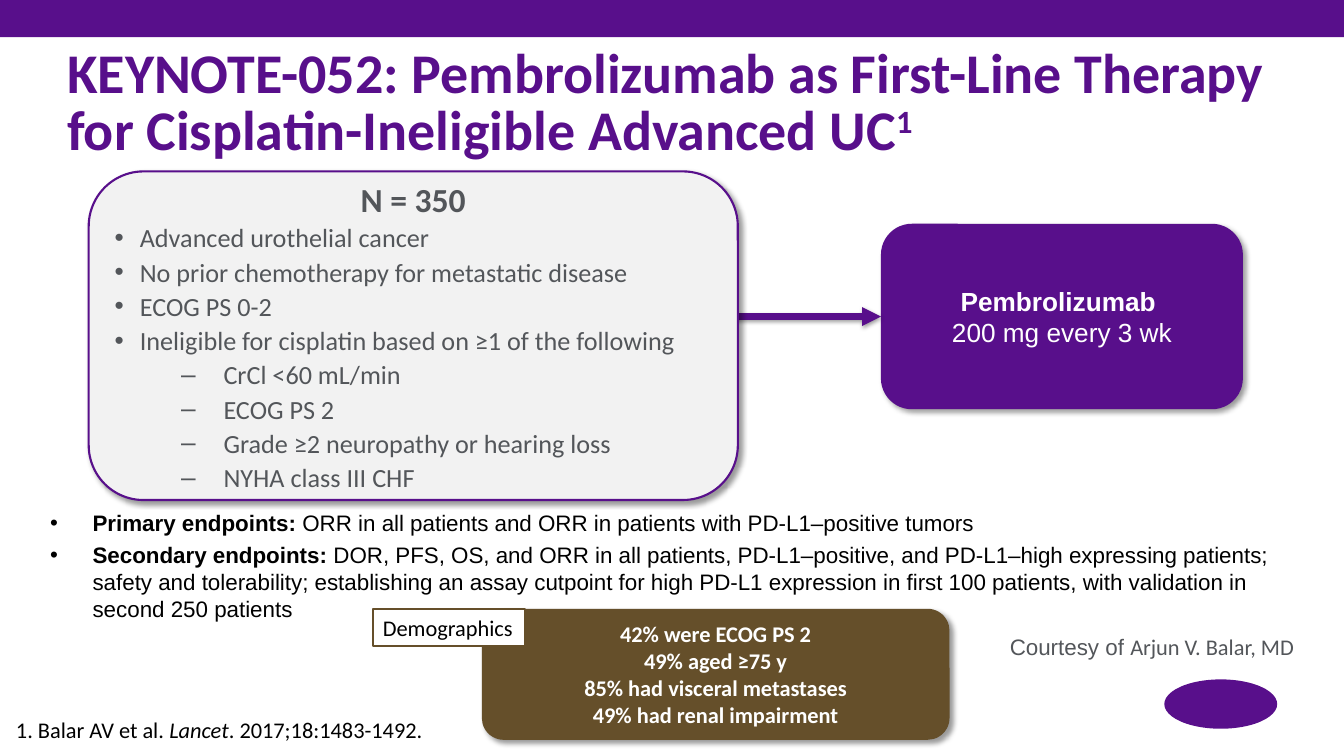
import lxml.etree
import pptx
import pptx.dml.color
import pptx.enum.shapes
import pptx.enum.text
import pptx.oxml.ns
import pptx.util

SHAPE = pptx.enum.shapes.MSO_SHAPE
ALIGN = pptx.enum.text.PP_ALIGN
ANCHOR = pptx.enum.text.MSO_ANCHOR
PURPLE, BROWN, PALE = "580F8B", "654F2A", "F2F2F2"
GREY, BLACK, WHITE = "53565A", "000000", "FFFFFF"


def color(hex_code):
    return pptx.dml.color.RGBColor.from_string(hex_code)


def child(parent, tag, **attributes):
    """Append a DrawingML element and return it."""
    element = lxml.etree.SubElement(parent, pptx.oxml.ns.qn(f"a:{tag}"))
    for key, value in attributes.items():
        element.set(key, str(value))
    return element


def cast_shadow(effects, opacity=40, blur=4, distance=3, angle=45):
    shadow = child(effects, "outerShdw", blurRad=pptx.util.Pt(blur),
                   dist=pptx.util.Pt(distance), dir=angle * 60000,
                   algn="ctr", rotWithShape=0)
    child(child(shadow, "srgbClr", val=BLACK), "alpha", val=opacity * 1000)


class TrialSlide:
    """One slide; positions and sizes are percentages of its width and height."""

    def __init__(self):
        self.deck = pptx.Presentation()
        self.deck.slide_width = pptx.util.Inches(13.333)
        self.deck.slide_height = pptx.util.Inches(7.5)
        self.slide = self.deck.slides.add_slide(self.deck.slide_layouts[6])

    def place(self, *shares):
        """Turn x, y (and width, height) percentages into slide lengths."""
        sides = (self.deck.slide_width, self.deck.slide_height) * 2
        return [int(side * share / 100) for side, share in zip(sides, shares)]

    def panel(self, kind, area, fill, outline=None, shadow=False):
        panel = self.slide.shapes.add_shape(kind, *self.place(*area))
        panel.fill.solid()
        panel.fill.fore_color.rgb = color(fill)
        if outline:
            panel.line.color.rgb = color(outline)
            panel.line.width = pptx.util.Pt(1.5)
        else:
            panel.line.fill.background()
        panel.shadow.inherit = False
        if shadow:
            cast_shadow(panel._element.spPr.find(pptx.oxml.ns.qn("a:effectLst")))
        return panel.text_frame

    def text_area(self, area):
        return self.slide.shapes.add_textbox(*self.place(*area)).text_frame

    def arrow(self, start, end, ink, width):
        arrow = self.slide.shapes.add_connector(
            pptx.enum.shapes.MSO_CONNECTOR.STRAIGHT,
            *self.place(*start), *self.place(*end))
        arrow.line.color.rgb = color(ink)
        arrow.line.width = pptx.util.Pt(width)
        child(arrow.line._get_or_add_ln(), "tailEnd", type="triangle")
        cast_shadow(child(arrow._element.spPr, "effectLst"), 38, 3.1, 1.6, 90)

    def frame(self, frame, anchor=ANCHOR.TOP, wrap=True, grow=False):
        frame.vertical_anchor = anchor
        frame.word_wrap = wrap
        if grow:
            frame.auto_size = pptx.enum.text.MSO_AUTO_SIZE.SHAPE_TO_FIT_TEXT
        return frame

    def paragraph(self, frame, runs, size, ink, face="Calibri", bold=None,
                  align=ALIGN.LEFT, after=0, bullet=None, indent=0, hang=0, level=0):
        """Write runs given as (text, font overrides) pairs into the next paragraph."""
        first = frame.paragraphs[0]
        paragraph = frame.add_paragraph() if first.runs else first
        paragraph.alignment = align
        paragraph.level = level
        paragraph.space_after = pptx.util.Pt(after)
        if bullet:
            properties = paragraph._p.get_or_add_pPr()
            properties.set("marL", str(pptx.util.Inches(indent)))
            properties.set("indent", str(-pptx.util.Inches(hang)))
            child(properties, "buFont", typeface="Arial")
            child(properties, "buChar", char=bullet)
        font = paragraph.font
        font.size, font.name, font.bold = pptx.util.Pt(size), face, bold
        font.color.rgb = color(ink)
        for words, overrides in runs:
            run = paragraph.add_run()
            run.text = words
            for key, value in overrides.items():
                setattr(run.font, key, value)
        return paragraph


def add_heading(page):
    page.panel(SHAPE.RECTANGLE, (0, 0, 100, 4.93), PURPLE)
    title = page.frame(page.text_area((5, 15.33, 90, 6.13)), ANCHOR.BOTTOM)
    title.margin_left = title.margin_right = title.margin_top = title.margin_bottom = 0
    heading = page.paragraph(
        title, [("KEYNOTE-052: Pembrolizumab as First-Line Therapy ", {})],
        40, PURPLE, bold=True)
    heading.line_spacing = 0.85
    heading.add_line_break()
    heading.add_run().text = "for Cisplatin-Ineligible Advanced UC"
    citation_mark = heading.add_run()
    citation_mark.text = "1"
    citation_mark._r.get_or_add_rPr().set("baseline", "30000")


def add_trial_design(page):
    treatment = page.frame(page.panel(
        SHAPE.ROUNDED_RECTANGLE, (65.55, 29.6, 26.93, 24.53), PURPLE, shadow=True),
        ANCHOR.MIDDLE)
    for words, bold in (("Pembrolizumab ", True), ("200 mg every 3 wk", False)):
        page.paragraph(treatment, [(words, {})], 18.7, WHITE, "Arial", bold, ALIGN.CENTER)

    page.arrow((54.3, 41.87), (65.55, 41.87), PURPLE, 4.5)

    criteria = page.frame(page.panel(
        SHAPE.ROUNDED_RECTANGLE, (6.6, 22.67, 48.3, 43.47), PALE, PURPLE, shadow=True),
        ANCHOR.MIDDLE)
    page.paragraph(criteria, [("N = 350", {})], 24, GREY, bold=True,
                   align=ALIGN.CENTER, after=2)
    main_bullet = dict(bullet="•", indent=0.25, hang=0.25)
    sub_bullet = dict(bullet="–", indent=1.08, hang=0.42, level=1)
    for style, items in (
        (main_bullet, ("Advanced urothelial cancer",
                       "No prior chemotherapy for metastatic disease",
                       "ECOG PS 0-2",
                       "Ineligible for cisplatin based on ≥1 of the following")),
        (sub_bullet, ("CrCl <60 mL/min", "ECOG PS 2",
                      "Grade ≥2 neuropathy or hearing loss", "NYHA class III CHF")),
    ):
        for item in items:
            page.paragraph(criteria, [(item, {})], 18.7, GREY, after=2, **style)


def add_endpoints(page):
    endpoints = page.frame(page.text_area((3, 66.67, 93.3, 16.4)), grow=True)
    for label, measures in (
        ("Primary endpoints: ",
         "ORR in all patients and ORR in patients with PD-L1–positive tumors"),
        ("Secondary endpoints: ",
         "DOR, PFS, OS, and ORR in all patients, PD-L1–positive, and PD-L1–high "
         "expressing patients; safety and tolerability; establishing an assay cutpoint "
         "for high PD-L1 expression in first 100 patients, with validation in second "
         "250 patients"),
    ):
        page.paragraph(endpoints, [(label, {"bold": True}), (measures, {})], 16, BLACK,
                       "Arial", after=4, bullet="•", indent=0.42, hang=0.42)


def add_demographics(page):
    demographics = page.frame(page.panel(
        SHAPE.ROUNDED_RECTANGLE, (35.85, 80.53, 34.8, 17.33), BROWN, shadow=True),
        ANCHOR.MIDDLE, grow=True)
    for finding in ("42% were ECOG PS 2", "49% aged ≥75 y",
                    "85% had visceral metastases", "49% had renal impairment"):
        page.paragraph(demographics, [(finding, {})], 16, WHITE, bold=True,
                       align=ALIGN.CENTER)
    label = page.frame(page.panel(
        SHAPE.RECTANGLE, (27.75, 80.53, 11.33, 4.93), WHITE, BROWN),
        wrap=False, grow=True)
    page.paragraph(label, [("Demographics", {})], 16, BLACK)


def add_credits(page):
    reference = page.frame(page.text_area((0.45, 93.6, 84.23, 5.33)), ANCHOR.BOTTOM)
    page.paragraph(reference, [("1. Balar AV et al. ", {}), ("Lancet", {"italic": True}),
                               (". 2017;18:1483-1492.", {})], 16, BLACK)
    courtesy = page.frame(page.text_area((74.4, 83.07, 22.95, 4.93)),
                          wrap=False, grow=True)
    page.paragraph(courtesy, [("Courtesy of ", {"name": "Arial"}),
                              ("Arjun V. Balar, MD", {})], 16, GREY)
    page.panel(SHAPE.OVAL, (86.63, 89.87, 8.4, 6.53), PURPLE)


def main():
    page = TrialSlide()
    add_heading(page)
    add_trial_design(page)
    add_endpoints(page)
    add_demographics(page)
    add_credits(page)
    page.deck.save("out.pptx")


if __name__ == "__main__":
    main()
